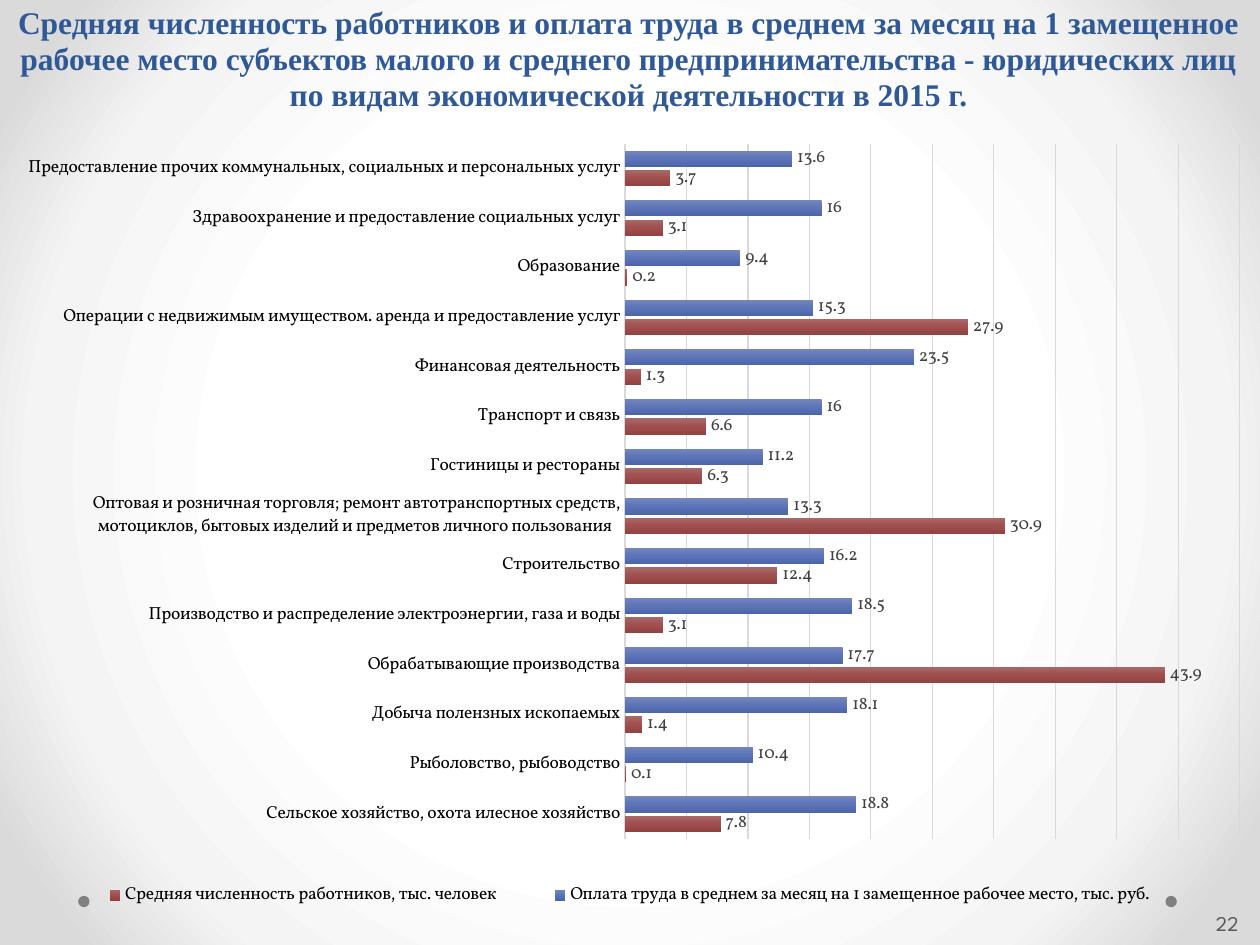
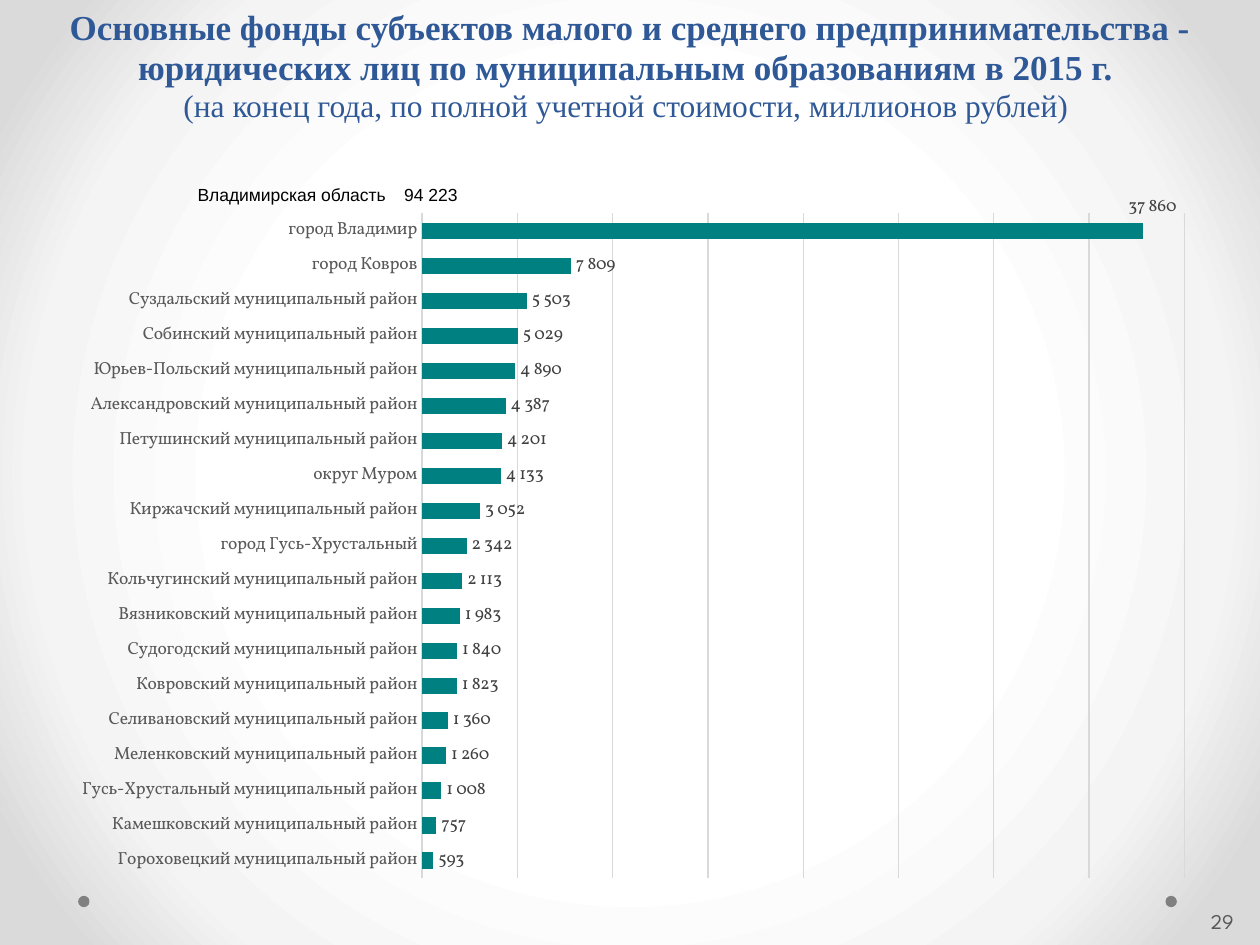
"""Build two slides with bar charts on small and medium enterprises."""
import dataclasses
import typing

import pptx
import pptx.chart.data
import pptx.dml.color
import pptx.enum.chart
import pptx.enum.shapes
import pptx.enum.text
import pptx.oxml
import pptx.oxml.ns
import pptx.util
from pptx.util import Inches

HUES = {
    "title": "2F5897", "dot": "808080", "page": "595959", "grid": "D9D9D9",
    "label": "404040", "black": "000000", "teal": "008080",
}
FADES = {
    "back": ((50, "FFFFFF"), (76, "F4F4F4"), (92, "DADADA")),
    "blue": ((0, "7586BC"), (50, "5C74B8"), (100, "4D65A8")),
    "red": ((0, "A86969"), (50, "A04E4E"), (100, "914242")),
}
ROUND = ('<a:path {0} path="circle"><a:fillToRect l="50000" t="50000" '
         'r="50000" b="50000"/></a:path>')
DOWN = '<a:lin {0} ang="5400000" scaled="0"/>'
SPACED = r"[>=1000000]0\ 000,;0,"
EDGE = {"xMode": "edge", "yMode": "edge"}
BODY, HEAD, FOOT, NOTE = "Vollkorn", "Times New Roman", "League Spartan", "Arial"


@dataclasses.dataclass(frozen=True)
class Line:
    text: str
    size: int
    bold: bool = True
    hue: str = "title"
    face: str = HEAD
    align: typing.Optional[str] = "CENTER"
    tab: float = 0


@dataclasses.dataclass(frozen=True)
class Bar:
    name: str
    vals: tuple
    hue: str
    unit: int = 1


@dataclasses.dataclass(frozen=True)
class Graph:
    box: tuple
    plot: tuple
    rows: tuple
    bars: tuple
    gap: int
    top: int
    step: int
    hue: str
    form: str = "General"
    key: typing.Optional[tuple] = None
    shift: typing.Optional[tuple] = None


@dataclasses.dataclass(frozen=True)
class Page:
    head: tuple
    lines: tuple
    graph: Graph
    num: str
    spot: tuple
    note: typing.Optional[Line] = None


STAFF = Graph(
    (0, 0.99, 9.99, 6.34), (4.96, 0.15, 4.88, 5.52),
    (
        "Предоставление прочих коммунальных, cоциальных и персональных услуг",
        "Здравоохранение и предоставление социальных услуг",
        "Образование",
        "Операции с недвижимым имуществом. аренда и предоставление услуг",
        "Финансовая деятельность",
        "Транспорт и связь",
        "Гостиницы и рестораны",
        "Оптовая и розничная торговля; ремонт автотранспортных средств, "
        "мотоциклов, бытовых изделий и предметов личного пользования ",
        "Строительство",
        "Производство и распределение электроэнергии, газа и воды",
        "Обрабатывающие производства",
        "Добыча полензных ископаемых",
        "Рыболовство, рыбоводство",
        "Сельское хозяйство, охота илесное хозяйство",
    ),
    (
        Bar("Оплата труда в среднем за месяц на 1 замещенное рабочее место, тыс. руб.",
            (13.6, 16, 9.4, 15.3, 23.5, 16, 11.2, 13.3, 16.2, 18.5, 17.7,
             18.1, 10.4, 18.8), "blue"),
        Bar("Средняя численность работников, тыс. человек",
            (3.7, 3.1, 0.2, 27.9, 1.3, 6.6, 6.3, 30.9, 12.4, 3.1, 43.9,
             1.4, 0.1, 7.8), "red"),
    ),
    87, 50, 5, "black", key=(0.45, 5.9, 9.09, 0.43),
)
AREA = " муниципальный район"
FUNDS = Graph(
    (0.47, 1.55, 9.11, 5.53), (2.88, 0.13, 6.05, 5.29),
    (
        "город Владимир", "город Ковров", "Суздальский" + AREA,
        "Собинский" + AREA, "Юрьев-Польский" + AREA, "Александровский" + AREA,
        "Петушинский" + AREA, "округ Муром", "Киржачский" + AREA,
        "город Гусь-Хрустальный", "Кольчугинский" + AREA, "Вязниковский" + AREA,
        "Судогодский" + AREA, "Ковровский" + AREA, "Селивановский" + AREA,
        "Меленковский" + AREA, "Гусь-Хрустальный" + AREA, "Камешковский" + AREA,
        "Гороховецкий" + AREA,
    ),
    (Bar("Series 1",
         (37860, 7809, 5503, 5029, 4890, 4387, 4201, 4133, 3052, 2342, 2113,
          1983, 1840, 1823, 1360, 1260, 1008, 757, 593), "teal", 1000),),
    115, 40000000, 5000000, "page", SPACED, shift=(-0.16, -0.19),
)
PAGES = (
    Page((-0.01, 0, 10, 0.96), (
        Line("Средняя численность работников и оплата труда в среднем за месяц "
             "на 1 замещенное рабочее место субъектов малого и среднего "
             "предпринимательства - юридических лиц по видам экономической "
             "деятельности в 2015 г.", 18),
    ), STAFF, "22", (9.62, 7.16, 0.38, 0.34)),
    Page((0, 0.02, 10, 1.03), (
        Line("Основные фонды субъектов малого и среднего предпринимательства - "
             "юридических лиц по муниципальным образованиям в 2015 г. ", 20),
        Line("(на конец года, по полной учетной стоимости, миллионов рублей) ",
             18, False),
    ), FUNDS, "29", (9.58, 7.15, 0.38, 0.32),
        Line("Владимирская область\t94 223", 10, False, "black", NOTE, None, 1.64)),
)


def style(obj: typing.Any, vals: dict) -> None:
    for key, val in vals.items():
        setattr(obj, key, val)


def tint(hue: str) -> pptx.dml.color.RGBColor:
    return pptx.dml.color.RGBColor.from_string(HUES[hue])


def ink(font: typing.Any, face: str, size: int, hue: str, bold: bool = False) -> None:
    style(font, {"name": face, "size": pptx.util.Pt(size), "bold": bold})
    font.color.rgb = tint(hue)


def paint(fill: typing.Any, hue: str) -> None:
    fill.solid()
    fill.fore_color.rgb = tint(hue)


def fade(fill: typing.Any, root: typing.Any, hue: str, tail: str) -> None:
    fill.gradient()
    node = next(root.iter(pptx.oxml.ns.qn("a:gradFill")))
    for kid in list(node):
        node.remove(kid)
    stops = "".join(f'<a:gs pos="{pos * 1000}"><a:srgbClr val="{code}"/></a:gs>'
                    for pos, code in FADES[hue])
    space = pptx.oxml.ns.nsdecls("a")
    for xml in (f"<a:gsLst {space}>{stops}</a:gsLst>", tail.format(space)):
        node.append(pptx.oxml.parse_xml(xml))


def write(slide: typing.Any, box: tuple, lines: tuple, frame: dict) -> None:
    text = slide.shapes.add_textbox(*map(Inches, box)).text_frame
    style(text, {"word_wrap": True, **frame})
    for i, line in enumerate(lines):
        para = text.add_paragraph() if i else text.paragraphs[0]
        if line.tab:
            para._p.get_or_add_pPr().append(pptx.oxml.parse_xml(
                f'<a:tabLst {pptx.oxml.ns.nsdecls("a")}>'
                f'<a:tab pos="{Inches(line.tab)}" algn="l"/></a:tabLst>'))
        if line.align:
            style(para, {"alignment": pptx.enum.text.PP_ALIGN[line.align],
                         "line_spacing": 0.95})
        run = para.add_run()
        run.text = line.text
        ink(run.font, line.face, line.size, line.hue, line.bold)


def place(root: typing.Any, spot: int, graph: Graph, area: tuple, modes: dict) -> None:
    old = root.find(pptx.oxml.ns.qn("c:layout"))
    if old is not None:
        root.remove(old)
    parts = (size / full for size, full in zip(area, graph.box[2:] * 2))
    vals = {**modes, **dict(zip("xywh", parts))}
    body = "".join(f'<c:{key} val="{val}"/>' for key, val in vals.items())
    root.insert(spot, pptx.oxml.parse_xml(
        f'<c:layout {pptx.oxml.ns.nsdecls("c")}><c:manualLayout>{body}'
        '</c:manualLayout></c:layout>'))


def chart(slide: typing.Any, graph: Graph) -> None:
    data = pptx.chart.data.CategoryChartData(number_format=graph.form)
    data.categories = graph.rows
    for bar in graph.bars:
        data.add_series(bar.name, [val * bar.unit for val in bar.vals])
    kinds = pptx.enum.chart
    pic = slide.shapes.add_chart(kinds.XL_CHART_TYPE.BAR_CLUSTERED,
                                 *map(Inches, graph.box), data).chart
    style(pic, {"has_title": False, "has_legend": bool(graph.key)})
    ink(pic.font, BODY, 10, "black")
    if graph.key:
        style(pic.legend, {"position": kinds.XL_LEGEND_POSITION.BOTTOM,
                           "include_in_layout": False})
        ink(pic.legend.font, BODY, 10, "black")
        place(pic.legend._element, 1, graph, graph.key, EDGE)
    none = kinds.XL_TICK_MARK.NONE
    cat, val = pic.category_axis, pic.value_axis
    style(cat, {"reverse_order": True, "major_tick_mark": none,
                "minor_tick_mark": none})
    ink(cat.tick_labels.font, BODY, 10, graph.hue)
    style(val, {"visible": False, "has_major_gridlines": True,
                "minimum_scale": 0, "maximum_scale": graph.top,
                "major_unit": graph.step})
    for rule, wide in ((cat.format.line, 1), (val.major_gridlines.format.line, 0.75)):
        rule.width = pptx.util.Pt(wide)
        rule.color.rgb = tint("grid")
    plot = pic.plots[0]
    style(plot, {"gap_width": graph.gap, "overlap": -20,
                 "vary_by_categories": False})
    for bar, ser in zip(graph.bars, plot.series):
        ser.invert_if_negative = False
        if bar.hue in FADES:
            fade(ser.format.fill, ser._element, bar.hue, DOWN)
        else:
            paint(ser.format.fill, bar.hue)
        tags = ser.data_labels
        style(tags, {"show_value": True, "number_format": graph.form,
                     "number_format_is_linked": False,
                     "position": kinds.XL_LABEL_POSITION.OUTSIDE_END})
        ink(tags.font, BODY, 10, "label")
        if graph.shift:
            tag = ser.points[0].data_label
            ink(tag.font, BODY, 10, "label")
            tag.position = kinds.XL_LABEL_POSITION.OUTSIDE_END
            place(tag._get_or_add_dLbl(), 1, graph, graph.shift, {})
    area = next(pic._chartSpace.iter(pptx.oxml.ns.qn("c:plotArea")))
    place(area, 0, graph, graph.plot, {"layoutTarget": "inner", **EDGE})


def dots(slide: typing.Any) -> None:
    for left in (9.25, 0.62):
        dot = slide.shapes.add_shape(pptx.enum.shapes.MSO_SHAPE.OVAL,
                                     *map(Inches, (left, 7.11, 0.09, 0.09)))
        dot.shadow.inherit = False
        paint(dot.fill, "dot")
        dot.line.fill.background()


def build(deck: typing.Any, page: Page) -> None:
    slide = deck.slides.add_slide(deck.slide_layouts[6])
    dots(slide)
    grow = {"auto_size": pptx.enum.text.MSO_AUTO_SIZE.SHAPE_TO_FIT_TEXT}
    write(slide, page.head, page.lines, grow)
    chart(slide, page.graph)
    if page.note:
        write(slide, (1.47, 1.41, 2.43, 0.27), (page.note,), grow)
    write(slide, page.spot, (Line(page.num, 12, False, "page", FOOT, None),),
          {"margin_left": Inches(0.03), "margin_right": Inches(0.05),
           "vertical_anchor": pptx.enum.text.MSO_ANCHOR.MIDDLE})


def main() -> None:
    deck = pptx.Presentation()
    style(deck, {"slide_width": Inches(10), "slide_height": Inches(7.5)})
    base = deck.slide_master
    fade(base.background.fill, base.element, "back", ROUND)
    for page in PAGES:
        build(deck, page)
    deck.save("out.pptx")


if __name__ == "__main__":
    main()
